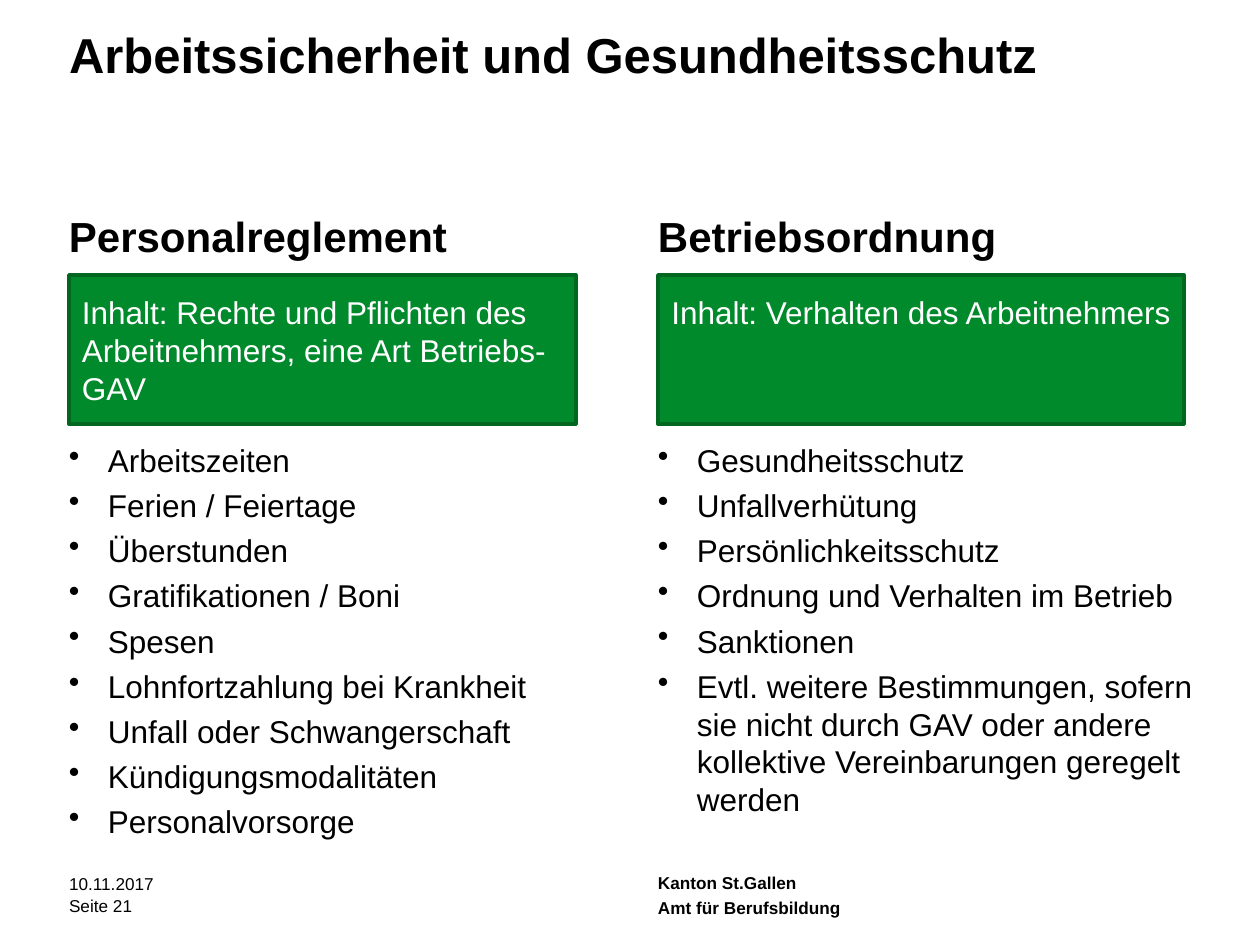
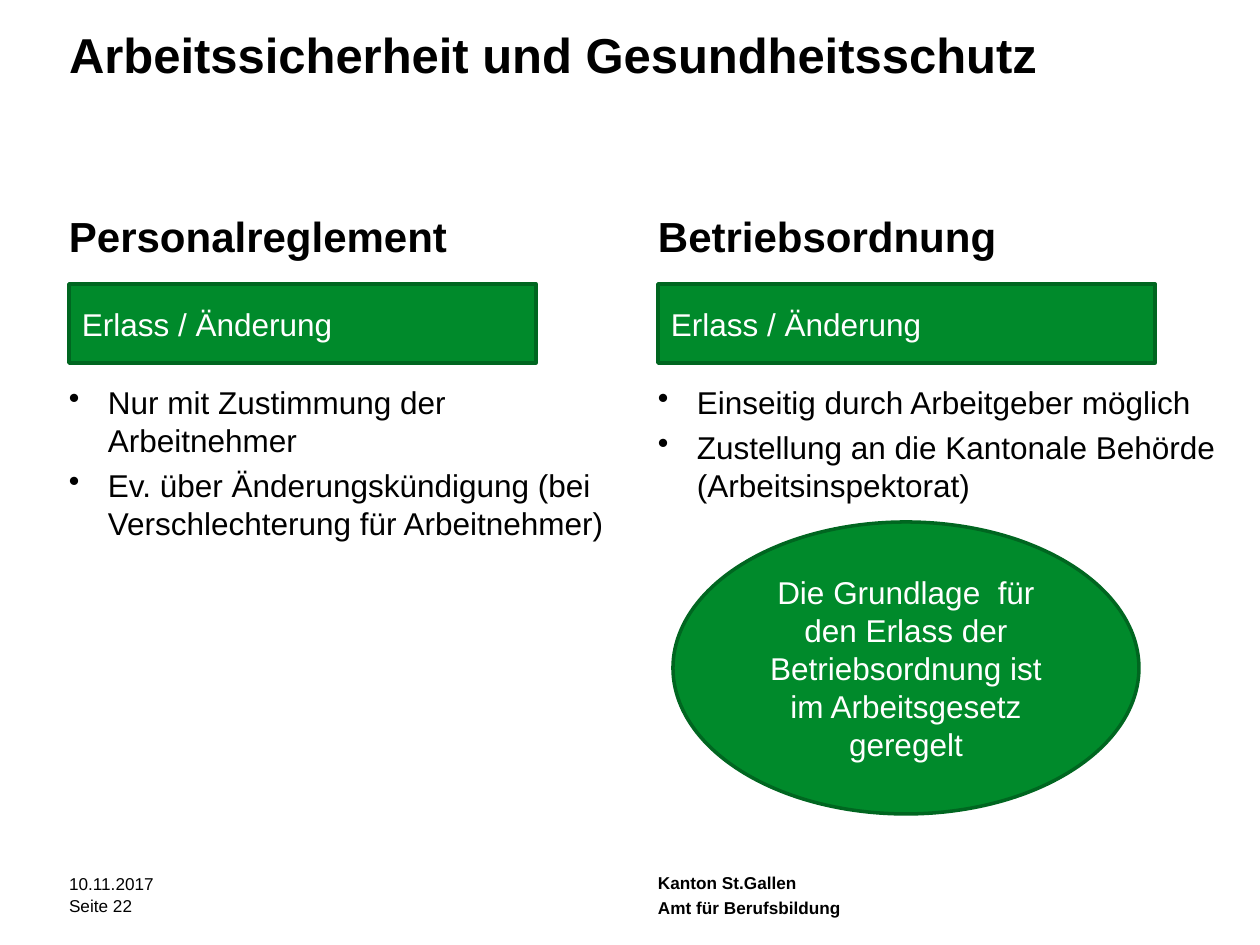
from pptx import Presentation
from pptx.dml.color import RGBColor
from pptx.enum.shapes import MSO_SHAPE
from pptx.enum.text import MSO_ANCHOR, PP_ALIGN
from pptx.oxml.ns import qn
from pptx.util import Pt
from lxml.etree import SubElement

PX = 914400 / 126
BLACK = RGBColor(0x00, 0x00, 0x00)
WHITE = RGBColor(0xFF, 0xFF, 0xFF)
GREEN = RGBColor(0x00, 0x8A, 0x2B)
DARK_GREEN = RGBColor(0x00, 0x66, 0x20)
FONT = "Arial"
LEFT, RIGHT = 69, 658
BODY_SIZE = 18
PARAGRAPH_GAP = 4.2
HEADING_LINE = 33
BULLET_INDENT = 39


def px(value):
    return round(value * PX)


def write(slide, text, box, shape_type=None, size=BODY_SIZE, bold=False, color=BLACK,
          align=PP_ALIGN.LEFT, anchor=MSO_ANCHOR.TOP, inset=(0, 0), line_spacing=None,
          bullets=(), heading_gap=0):
    left, top, width, height = map(px, box)
    if shape_type is None:
        shape = slide.shapes.add_textbox(left, top, width, height)
    else:
        shape = slide.shapes.add_shape(shape_type, left, top, width, height)
        shape.shadow.inherit = False
        shape.fill.solid()
        shape.fill.fore_color.rgb = GREEN
        shape.line.color.rgb = DARK_GREEN
        shape.line.width = Pt(2)
    frame = shape.text_frame
    frame.word_wrap = True
    frame.vertical_anchor = anchor
    frame.margin_left = frame.margin_right = px(inset[0])
    frame.margin_top = frame.margin_bottom = px(inset[1])
    for index, line in enumerate([text, *bullets]):
        paragraph = frame.paragraphs[0] if index == 0 else frame.add_paragraph()
        paragraph.text = line
        paragraph.alignment = align
        if line_spacing:
            paragraph.line_spacing = Pt(line_spacing)
        if bullets:
            paragraph.space_after = Pt(PARAGRAPH_GAP if index else heading_gap)
        if index:
            properties = paragraph._p.get_or_add_pPr()
            properties.set("marL", str(px(BULLET_INDENT)))
            properties.set("indent", str(-px(BULLET_INDENT)))
            SubElement(properties, qn("a:buChar")).set("char", "•")
        paragraph.font.name = FONT
        paragraph.font.size = Pt(BODY_SIZE if index else size)
        paragraph.font.bold = bold and not index
        paragraph.font.color.rgb = color


presentation = Presentation()
presentation.slide_width = px(1260)
presentation.slide_height = px(945)

pages = [
    {
        "number": 21,
        "skipped_lines": 3,
        "band": {"top": 275, "height": 149, "anchor": MSO_ANCHOR.TOP, "inset": (13, 18)},
        "columns": [
            (LEFT, "Personalreglement", 507, PP_ALIGN.LEFT,
             "Inhalt: Rechte und Pflichten des Arbeitnehmers, eine Art Betriebs-GAV",
             ["Arbeitszeiten", "Ferien / Feiertage", "Überstunden", "Gratifikationen / Boni",
              "Spesen", "Lohnfortzahlung bei Krankheit", "Unfall oder Schwangerschaft",
              "Kündigungsmodalitäten", "Personalvorsorge"]),
            (RIGHT, "Betriebsordnung", 526, PP_ALIGN.CENTER,
             "Inhalt: Verhalten des Arbeitnehmers",
             ["Gesundheitsschutz", "Unfallverhütung", "Persönlichkeitsschutz",
              "Ordnung und Verhalten im Betrieb", "Sanktionen",
              "Evtl. weitere Bestimmungen, sofern sie nicht durch GAV oder andere "
              "kollektive Vereinbarungen geregelt werden"]),
        ],
    },
    {
        "number": 22,
        "skipped_lines": 2,
        "band": {"top": 284, "height": 79, "anchor": MSO_ANCHOR.MIDDLE, "inset": (13, 6)},
        "columns": [
            (LEFT, "Personalreglement", 467, PP_ALIGN.LEFT, "Erlass / Änderung",
             ["Nur mit Zustimmung der Arbeitnehmer",
              "Ev. über Änderungskündigung (bei Verschlechterung für Arbeitnehmer)"]),
            (RIGHT, "Betriebsordnung", 497, PP_ALIGN.LEFT, "Erlass / Änderung",
             ["Einseitig durch Arbeitgeber möglich",
              "Zustellung an die Kantonale Behörde (Arbeitsinspektorat)"]),
        ],
    },
]

for page in pages:
    slide = presentation.slides.add_slide(presentation.slide_layouts[6])
    write(slide, "Arbeitssicherheit und Gesundheitsschutz", (LEFT, 24, 1155, 132),
          size=28, bold=True)
    band = page["band"]
    for left, heading, band_width, align, band_text, bullets in page["columns"]:
        write(slide, heading, (left, 210, 567, 634), size=24, bold=True, bullets=bullets,
              heading_gap=PARAGRAPH_GAP + page["skipped_lines"] * HEADING_LINE)
        write(slide, band_text, (left, band["top"], band_width, band["height"]),
              shape_type=MSO_SHAPE.RECTANGLE, color=WHITE, align=align,
              anchor=band["anchor"], inset=band["inset"])
    for text, left, top, width, bold, line_spacing in [
        ("10.11.2017", LEFT, 873, 282, False, 11.9),
        (f"Seite {page['number']}", LEFT, 895, 282, False, None),
        ("Kanton St.Gallen", RIGHT, 872, 501, True, None),
        ("Amt für Berufsbildung", RIGHT, 897, 501, True, 11.9),
    ]:
        write(slide, text, (left, top, width, 21), size=9.8, bold=bold,
              line_spacing=line_spacing)

write(slide, "Die Grundlage  für den Erlass der Betriebsordnung ist im Arbeitsgesetz geregelt",
      (673, 522, 466, 292), shape_type=MSO_SHAPE.OVAL, color=WHITE,
      align=PP_ALIGN.CENTER, anchor=MSO_ANCHOR.MIDDLE, inset=(13, 6))

presentation.save("out.pptx")
